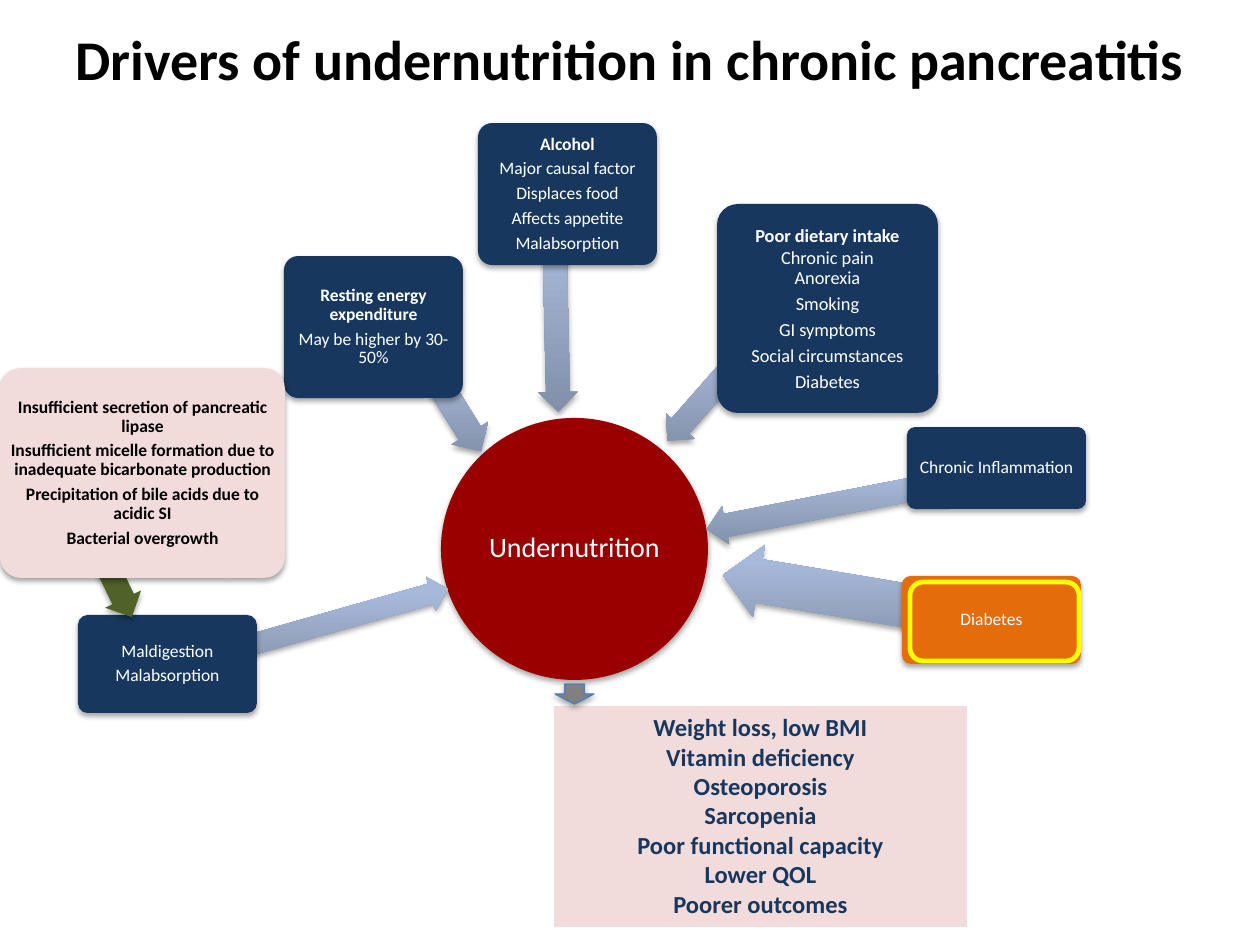
"""Build the slide on drivers of undernutrition in chronic pancreatitis."""
from dataclasses import dataclass

from pptx import Presentation
from pptx.dml.color import RGBColor
from pptx.enum.shapes import MSO_SHAPE
from pptx.enum.text import MSO_ANCHOR, MSO_AUTO_SIZE, PP_ALIGN
from pptx.oxml import parse_xml
from pptx.oxml.ns import nsdecls
from pptx.util import Emu, Pt

PIXEL = 914400 / 126
COLORS = {
    "navy": "17375E", "red": "990000", "pink": "F2DCDB", "orange": "E46C0A",
    "olive": "4F6228", "grey": "808080", "blue": "4B7EBC", "yellow": "FFFF00",
    "white": "FFFFFF", "black": "000000",
}
GRADIENT = ((0, "818FA8"), (80, "A7B9DA"), (100, "A7BADC"))

Box = tuple[int, int, int, int]


@dataclass(frozen=True)
class Driver:
    lines: tuple[str, ...]
    card: Box
    arrow: Box
    rotation: float
    fill: str = "navy"
    color: str = "white"
    arrow_fill: str | None = None
    size: float = 10
    bold_lines: int = 0
    tight_lines: int = 0


DRIVERS = (
    Driver(("Maldigestion", "Malabsorption"),
           (78, 615, 179, 98), (178, 609, 275, 35), 164.2),
    Driver(("Poor dietary intake", "Chronic pain", "Anorexia", "Smoking",
            "GI symptoms", "Social circumstances", "Diabetes"),
           (717, 204, 221, 209), (644, 369, 139, 39), 311.4,
           size=10.5, bold_lines=1, tight_lines=2),
    Driver(("Resting energy expenditure", "May be higher by 30-50%"),
           (284, 256, 179, 142), (388, 378, 122, 43), 238.3, bold_lines=1),
    Driver(("Alcohol", "Major causal factor", "Displaces food",
            "Affects appetite", "Malabsorption"),
           (478, 123, 179, 142), (450, 286, 212, 40), 268.7, bold_lines=1),
    Driver(("Insufficient secretion of pancreatic lipase",
            "Insufficient micelle formation due to inadequate bicarbonate production",
            "Precipitation of bile acids due to acidic SI",
            "Bacterial overgrowth"),
           (0, 368, 285, 210), (68, 557, 89, 40), 244.2,
           fill="pink", color="black", arrow_fill="olive", bold_lines=4),
    Driver(("Chronic Inflammation",),
           (907, 427, 179, 82), (704, 483, 280, 39), 349),
    Driver(("Diabetes",),
           (902, 576, 179, 88), (721, 561, 273, 73), 9.5, fill="orange"),
)
OUTCOMES = ("Weight loss, low BMI", "Vitamin deficiency", "Osteoporosis",
            "Sarcopenia", "Poor functional capacity", "Lower QOL",
            "Poorer outcomes")


def px(length: int) -> Emu:
    return Emu(round(length * PIXEL))


def rgb(name: str) -> RGBColor:
    return RGBColor.from_string(COLORS[name])


def write_text(frame, lines: tuple[str, ...], *, size: float, color: str,
               bold_lines: int = 0, tight_lines: int = 0,
               margin: int | None = None, anchor=MSO_ANCHOR.MIDDLE) -> None:
    frame.word_wrap = True
    frame.vertical_anchor = anchor
    if margin is not None:
        frame.margin_left = frame.margin_right = px(margin)
        frame.margin_top = frame.margin_bottom = px(margin)
    for index, line in enumerate(lines):
        paragraph = frame.add_paragraph() if index else frame.paragraphs[0]
        paragraph.alignment = PP_ALIGN.CENTER
        if index >= tight_lines:
            paragraph.line_spacing = 0.9
            paragraph.space_after = Pt(round(size * 0.33, 1))
        run = paragraph.add_run()
        run.text = line
        run.font.name = "Calibri"
        run.font.size = Pt(size)
        run.font.bold = index < bold_lines
        run.font.color.rgb = rgb(color)


def add_shadow(shape) -> None:
    shape.element.spPr.find(
        "{http://schemas.openxmlformats.org/drawingml/2006/main}effectLst"
    ).append(parse_xml(
        f'<a:outerShdw {nsdecls("a")} blurRad="40000" dist="23000" '
        'dir="5400000" rotWithShape="0"><a:srgbClr val="000000">'
        '<a:alpha val="35000"/></a:srgbClr></a:outerShdw>'))


def fill_gradient(shape) -> None:
    stops = "".join(
        f'<a:gs pos="{position * 1000}"><a:srgbClr val="{color}"/></a:gs>'
        for position, color in GRADIENT)
    shape.element.spPr.prstGeom.addnext(parse_xml(
        f'<a:gradFill {nsdecls("a")} rotWithShape="0"><a:gsLst>{stops}'
        '</a:gsLst><a:lin ang="16200000" scaled="0"/></a:gradFill>'))


def draw_shape(slide, kind, box: Box, *, fill: str | None = None,
               line: str | None = None, line_width: float = 0.75,
               adjustments: tuple[float, ...] = (), shadow: bool = True):
    shape = slide.shapes.add_shape(kind, *map(px, box))
    for index, value in enumerate(adjustments):
        shape.adjustments[index] = value
    if fill:
        shape.fill.solid()
        shape.fill.fore_color.rgb = rgb(fill)
    if line:
        shape.line.color.rgb = rgb(line)
        shape.line.width = Pt(line_width)
    else:
        shape.line.fill.background()
    shape.shadow.inherit = False
    if shadow:
        add_shadow(shape)
    return shape


def draw_driver(slide, driver: Driver) -> None:
    arrow = draw_shape(slide, MSO_SHAPE.LEFT_ARROW, driver.arrow,
                       fill=driver.arrow_fill, adjustments=(0.6, 0.5))
    arrow.rotation = driver.rotation
    if driver.arrow_fill is None:
        fill_gradient(arrow)
    card = draw_shape(slide, MSO_SHAPE.ROUNDED_RECTANGLE, driver.card,
                      fill=driver.fill, adjustments=(0.1,))
    write_text(card.text_frame, driver.lines, size=driver.size,
               color=driver.color, bold_lines=driver.bold_lines,
               tight_lines=driver.tight_lines, margin=3)


def main() -> None:
    presentation = Presentation()
    presentation.slide_width, presentation.slide_height = px(1260), px(945)
    slide = presentation.slides.add_slide(presentation.slide_layouts[5])

    title = slide.shapes.title
    title.left, title.top, title.width, title.height = map(px, (0, 0, 1260, 116))
    write_text(title.text_frame,
               ("Drivers of undernutrition in chronic pancreatitis",),
               size=32, color="black", bold_lines=1, tight_lines=1)

    center = draw_shape(slide, MSO_SHAPE.OVAL, (441, 418, 267, 262), fill="red")
    write_text(center.text_frame, ("Undernutrition",), size=16, color="white",
               margin=1)
    for driver in DRIVERS:
        draw_driver(slide, driver)

    outcomes = draw_shape(slide, MSO_SHAPE.RECTANGLE, (554, 706, 413, 221),
                          fill="pink", shadow=False)
    write_text(outcomes.text_frame, OUTCOMES, size=14, color="navy",
               bold_lines=len(OUTCOMES), tight_lines=len(OUTCOMES),
               anchor=MSO_ANCHOR.TOP)
    outcomes.text_frame.auto_size = MSO_AUTO_SIZE.SHAPE_TO_FIT_TEXT
    draw_shape(slide, MSO_SHAPE.DOWN_ARROW, (555, 684, 39, 20),
               fill="grey", line="blue")
    highlight = draw_shape(slide, MSO_SHAPE.ROUNDED_RECTANGLE,
                           (910, 582, 169, 79), line="yellow",
                           line_width=2.75, shadow=False)
    highlight.fill.background()
    presentation.save("out.pptx")


if __name__ == "__main__":
    main()
